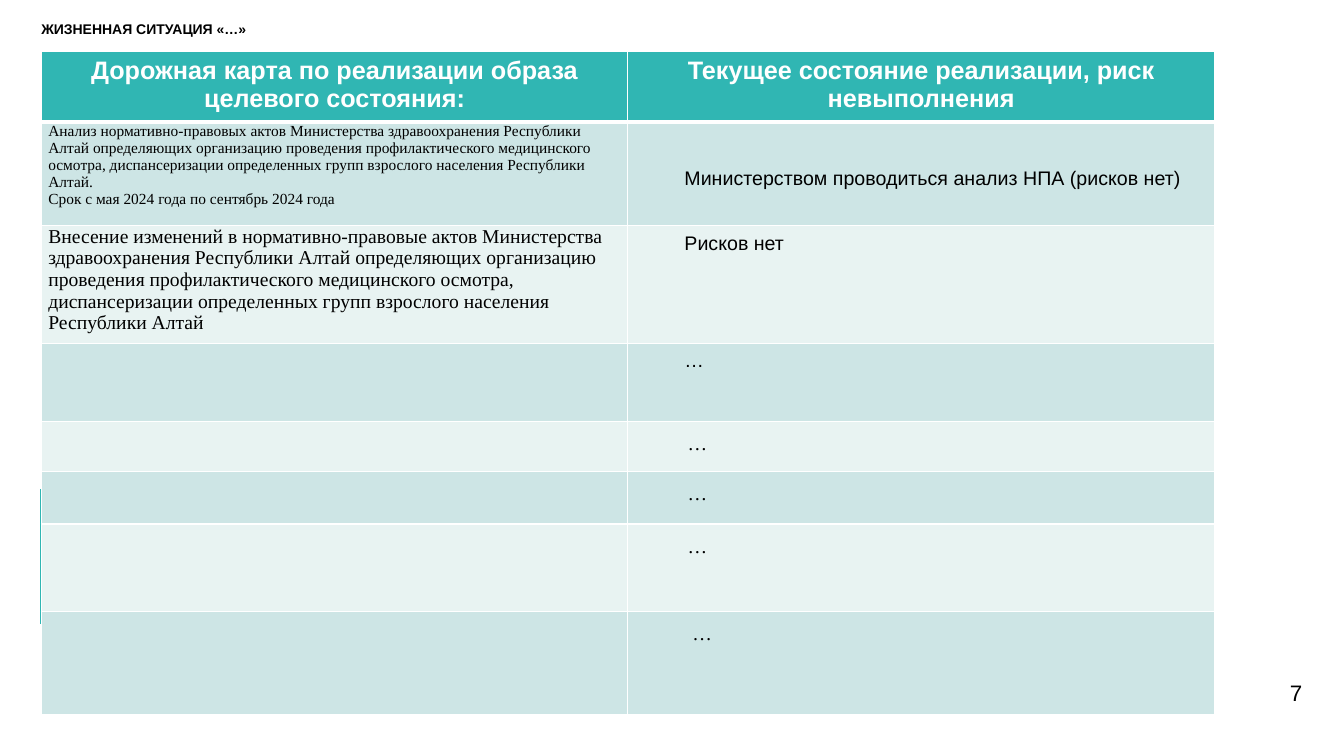
from lxml import etree
from pptx import Presentation
from pptx.dml.color import RGBColor
from pptx.enum.shapes import MSO_CONNECTOR
from pptx.enum.text import MSO_ANCHOR, PP_ALIGN
from pptx.oxml.ns import qn
from pptx.util import Pt

LEFT, CENTER, RIGHT, JUSTIFY = PP_ALIGN.LEFT, PP_ALIGN.CENTER, PP_ALIGN.RIGHT, PP_ALIGN.JUSTIFY
TOP, MIDDLE = MSO_ANCHOR.TOP, MSO_ANCHOR.MIDDLE
STRAIGHT = MSO_CONNECTOR.STRAIGHT
COLORS = {"teal": "30B6B3", "band": "CDE5E5", "light": "E8F3F2", "white": "FFFFFF", "black": "000000"}
SANS, SERIF = "Arial", "Times New Roman"
TIGHT, NORMAL = (5, 0, 5, 0), (7.2, 3.6, 7.2, 3.6)
INDENT = 35.4


def color(name):
    return RGBColor.from_string(COLORS[name])


class SlideBuilder:
    def __init__(self, slide):
        self.slide = slide

    def add_lines(self, frame, lines, size, font=SANS, ink="black", bold=False, align=LEFT, spacing=1.0, indent=0):
        frame.word_wrap = True
        for index, line in enumerate(lines):
            paragraph = frame.paragraphs[0] if index == 0 else frame.add_paragraph()
            paragraph.alignment = align
            paragraph.line_spacing = spacing
            if indent:
                properties = paragraph._p.get_or_add_pPr()
                properties.set("marL", "0")
                properties.set("indent", str(Pt(indent)))
            run = paragraph.add_run()
            run.text = line
            run.font.size = Pt(size)
            run.font.name = font
            run.font.bold = bold
            run.font.color.rgb = color(ink)

    def text(self, left, top, width, height, line, size, anchor=TOP, **style):
        shape = self.slide.shapes.add_textbox(Pt(left), Pt(top), Pt(width), Pt(height))
        frame = shape.text_frame
        frame.margin_left = frame.margin_top = frame.margin_right = frame.margin_bottom = 0
        frame.vertical_anchor = anchor
        self.add_lines(frame, [line], size, **style)

    def line(self, x1, y1, x2, y2, ink, width):
        connector = self.slide.shapes.add_connector(STRAIGHT, Pt(x1), Pt(y1), Pt(x2), Pt(y2))
        connector.line.color.rgb = color(ink)
        connector.line.width = Pt(width)
        etree.SubElement(connector._element.spPr, qn("a:effectLst"))

    def table(self, left, top, column_widths, row_heights):
        shape = self.slide.shapes.add_table(len(row_heights), len(column_widths), Pt(left), Pt(top),
                                            Pt(sum(column_widths)), Pt(sum(row_heights)))
        for column, width in zip(shape.table.columns, column_widths):
            column.width = Pt(width)
        for row, height in zip(shape.table.rows, row_heights):
            row.height = Pt(height)
        return shape.table

    def cell(self, cell, fill, margins=NORMAL, lines=(), borders=(1, 1, 1, 1), **style):
        cell.margin_left, cell.margin_top, cell.margin_right, cell.margin_bottom = map(Pt, margins)
        properties = cell._tc.get_or_add_tcPr()
        for side, width in zip("LRTB", borders):
            border = etree.SubElement(properties, qn(f"a:ln{side}"), w=str(Pt(width)))
            solid = etree.SubElement(border, qn("a:solidFill"))
            etree.SubElement(solid, qn("a:srgbClr"), val=COLORS["white"])
        cell.fill.solid()
        cell.fill.fore_color.rgb = color(fill)
        if lines:
            self.add_lines(cell.text_frame, lines, **style)


HEADERS = [
    "Дорожная карта по реализации образа целевого состояния:",
    "Текущее состояние реализации, риск невыполнения",
]
ANALYSIS = [
    "Анализ нормативно-правовых актов Министерства здравоохранения Республики Алтай определяющих "
    "организацию проведения профилактического медицинского осмотра, диспансеризации определенных "
    "групп взрослого населения Республики Алтай.",
    "Срок с мая 2024 года по сентябрь 2024 года",
]
CHANGES = [
    "Внесение изменений в нормативно-правовые актов Министерства здравоохранения Республики Алтай "
    "определяющих организацию проведения профилактического медицинского осмотра,",
    "диспансеризации определенных групп взрослого населения Республики Алтай",
]
STEPS = [(ANALYSIS, 11), (CHANGES, 14)] + [([], 14)] * 5
STATES = [
    ("Министерством проводиться анализ НПА (рисков нет)", SANS, (5, 28, 5, 0), INDENT),
    ("Рисков нет", SANS, TIGHT, INDENT),
    ("…", SANS, TIGHT, INDENT),
    ("…", SERIF, NORMAL, INDENT),
    ("…", SERIF, NORMAL, INDENT),
    ("…", SERIF, NORMAL, INDENT),
    ("…", SERIF, NORMAL, INDENT + 3.5),
]
ROW_HEIGHTS = [50, 74, 77, 55.5, 36, 37.5, 62.5, 73.5]


def main():
    presentation = Presentation()
    presentation.slide_width, presentation.slide_height = Pt(960), Pt(540)
    builder = SlideBuilder(presentation.slides.add_slide(presentation.slide_layouts[6]))

    builder.text(29.5, 15.8, 795.6, 28, "ЖИЗНЕННАЯ СИТУАЦИЯ «…»", 10, bold=True, spacing=0.9)
    builder.text(854, 479.5, 76.3, 31, "7", 16, anchor=MIDDLE, align=RIGHT)
    builder.line(29.5, 349.2, 29.5, 445.7, "teal", 2.25)

    roadmap = builder.table(29.5, 36.9, [419, 419], ROW_HEIGHTS)
    for column, header in enumerate(HEADERS):
        builder.cell(roadmap.cell(0, column), "teal", lines=[header], borders=(1, 1, 1, 3),
                     size=18, ink="white", bold=True, align=CENTER)
    for row, ((step, size), (state, font, margins, indent)) in enumerate(zip(STEPS, STATES), start=1):
        fill = "band" if row % 2 else "light"
        borders = (1, 1, 3 if row == 1 else 1, 1)
        builder.cell(roadmap.cell(row, 0), fill, TIGHT, step, borders, size=size, font=SERIF)
        builder.cell(roadmap.cell(row, 1), fill, margins, [state], borders, size=14, font=font,
                     align=JUSTIFY, spacing=1.3, indent=indent)

    presentation.save("out.pptx")


if __name__ == "__main__":
    main()
